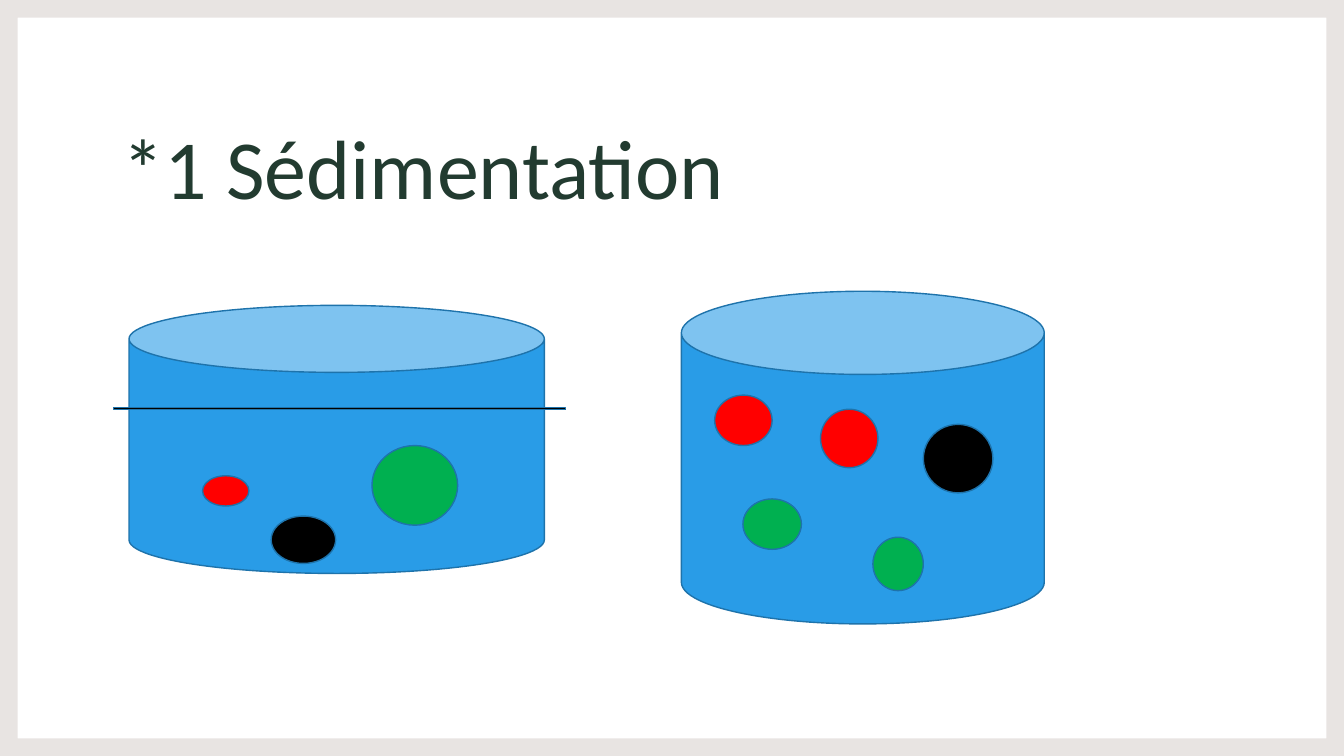
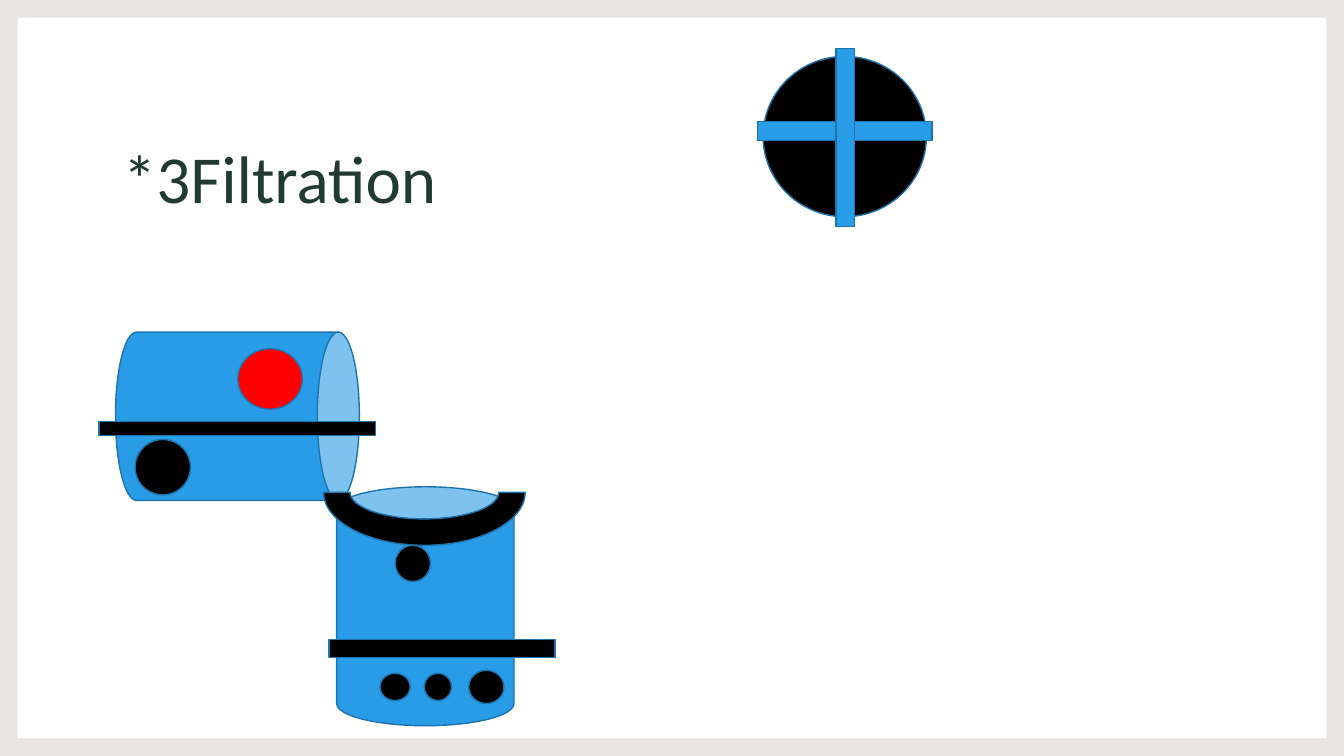
import pptx
import pptx.dml.color
import pptx.enum.shapes
import pptx.enum.text
import pptx.util

SHAPE = pptx.enum.shapes.MSO_SHAPE
COLOURS = {
    "title": "223B30",
    "frame": "E8E4E2",
    "water": "299CE7",
    "outline": "1E73AB",
    "red": "FF0000",
    "green": "00B050",
    "black": "000000",
}


class Deck:
    """Hold the shared style and draw on the current slide, on a grid of tenths of an inch."""

    COLUMNS, ROWS = 133.33, 75
    FRAME = 1.75
    FONT = "Calibri"

    def __init__(self):
        self.prs = pptx.Presentation()
        self.prs.slide_width = self.grid(self.COLUMNS)
        self.prs.slide_height = self.grid(self.ROWS)
        self.slide = None

    def grid(self, n):
        return pptx.util.Inches(n / 10)

    def colour(self, name):
        return pptx.dml.color.RGBColor.from_string(COLOURS[name])

    def new_slide(self, title, size):
        self.slide = self.prs.slides.add_slide(self.prs.slide_layouts[5])
        frame = self.shape(SHAPE.FRAME, 0, 0, self.COLUMNS, self.ROWS, "frame", outlined=False)
        frame.adjustments[0] = self.FRAME / self.ROWS
        self.title(title, size)

    def title(self, text, size):
        sp = self.slide.shapes.title
        sp.left, sp.top, sp.width, sp.height = map(self.grid, (11.2, 7.9, 110.8, 14.1))
        tf = sp.text_frame
        tf.text = text
        tf.auto_size = pptx.enum.text.MSO_AUTO_SIZE.NONE
        tf.vertical_anchor = pptx.enum.text.MSO_ANCHOR.BOTTOM
        p = tf.paragraphs[0]
        p.alignment = pptx.enum.text.PP_ALIGN.LEFT
        p.line_spacing = 1.1
        p.font.name = self.FONT
        p.font.size = pptx.util.Pt(size)
        p.font.color.rgb = self.colour("title")

    def shape(self, kind, x, y, w, h, fill, rotation=0, outlined=True):
        sp = self.slide.shapes.add_shape(kind, *map(self.grid, (x, y, w, h)))
        sp.shadow.inherit = False
        sp.rotation = rotation
        sp.fill.solid()
        sp.fill.fore_color.rgb = self.colour(fill)
        if outlined:
            sp.line.color.rgb = self.colour("outline")
            sp.line.width = pptx.util.Pt(1)
        else:
            sp.line.fill.background()
        return sp

    def tank(self, x, y, w, h, rotation=0):
        self.shape(SHAPE.CAN, x, y, w, h, "water", rotation)

    def bar(self, x, y, w, h, fill="black", rotation=0):
        self.shape(SHAPE.MATH_MINUS, x, y, w, h, fill, rotation)

    def bowl(self, x, y, w, h):
        self.shape(SHAPE.BLOCK_ARC, x, y, w, h, "black", 180)

    def particles(self, fill, *boxes):
        for box in boxes:
            self.shape(SHAPE.OVAL, *box, fill)

    def save(self):
        self.prs.save("out.pptx")


def sedimentation(deck):
    deck.new_slide("*1 Sédimentation", 60)
    deck.tank(12.8, 30.3, 41.2, 26.6)
    deck.particles("red", (20.1, 47.2, 4.6, 3))
    deck.particles("green", (36.9, 44.2, 8.5, 7.9))
    deck.particles("black", (26.9, 51.2, 6.4, 4.7))
    deck.bar(3.2, 40.1, 61, 0.9)

    deck.tank(67.6, 28.9, 36, 33)
    deck.particles("red", (70.9, 39.2, 5.7, 5), (81.4, 40.6, 5.7, 5.8))
    deck.particles("green", (73.7, 49.5, 5.8, 5), (86.6, 53.3, 5, 5.3))
    deck.particles("black", (91.6, 42.1, 6.9, 6.8))


def filtration(deck):
    deck.new_slide("*3Filtration", 48)
    deck.tank(15.2, 29.2, 16.7, 24.2, rotation=90)
    deck.bar(4.9, 39.6, 37.3, 5.8)
    deck.particles("black", (13.4, 43.6, 5.5, 5.5))
    deck.particles("red", (23.6, 34.6, 6.4, 6))

    deck.tank(33.4, 48.3, 17.6, 23.7)
    deck.bar(28.6, 60.6, 30.5, 7.5)
    deck.bowl(32.1, 43.6, 20, 10.5)
    deck.particles(
        "black",
        (39.2, 54.1, 3.5, 3.6),
        (37.7, 66.8, 3, 2.7),
        (42.1, 66.8, 2.7, 2.7),
        (46.5, 66.5, 3.5, 3.3),
    )

    deck.particles("black", (75.7, 5.6, 16.2, 15.9))
    deck.bar(72, 8.9, 23.6, 8.2, "water")
    deck.bar(71.8, 9.7, 24.1, 7.9, "water", rotation=90)


def main():
    deck = Deck()
    sedimentation(deck)
    filtration(deck)
    deck.save()


if __name__ == "__main__":
    main()
